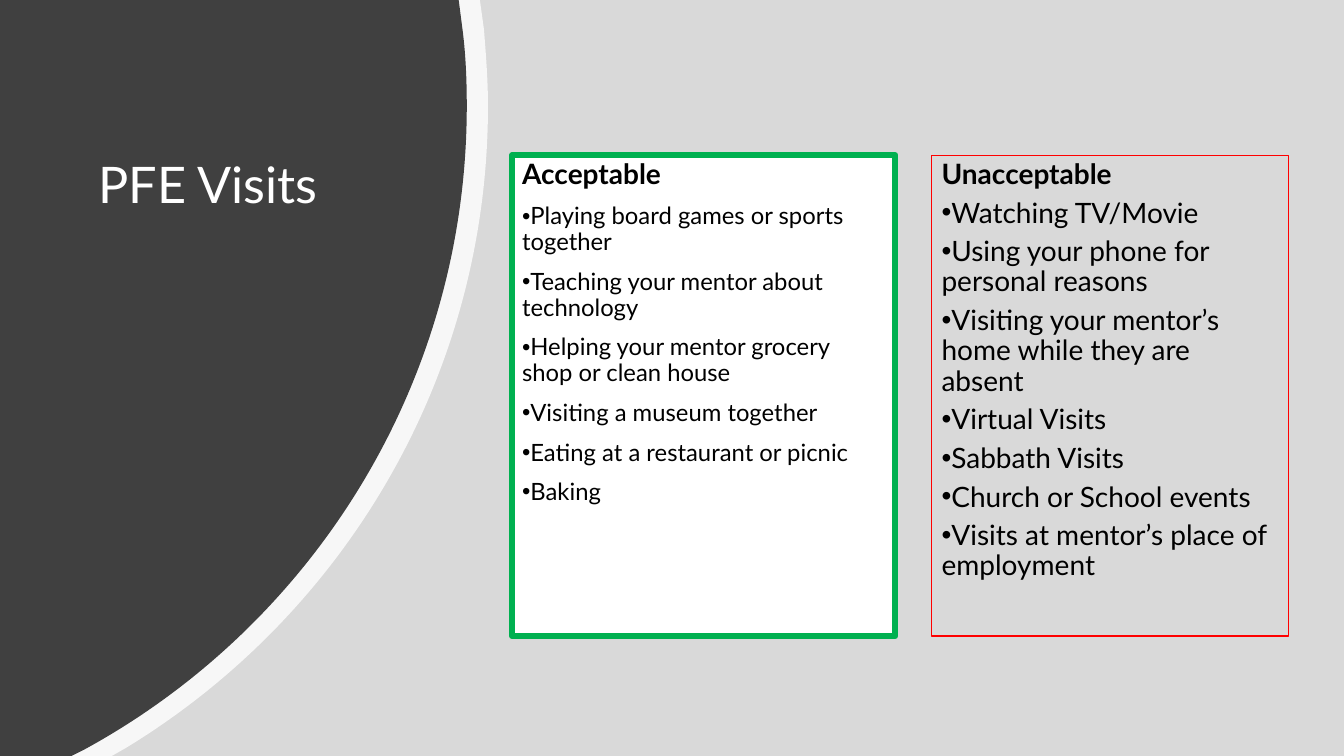
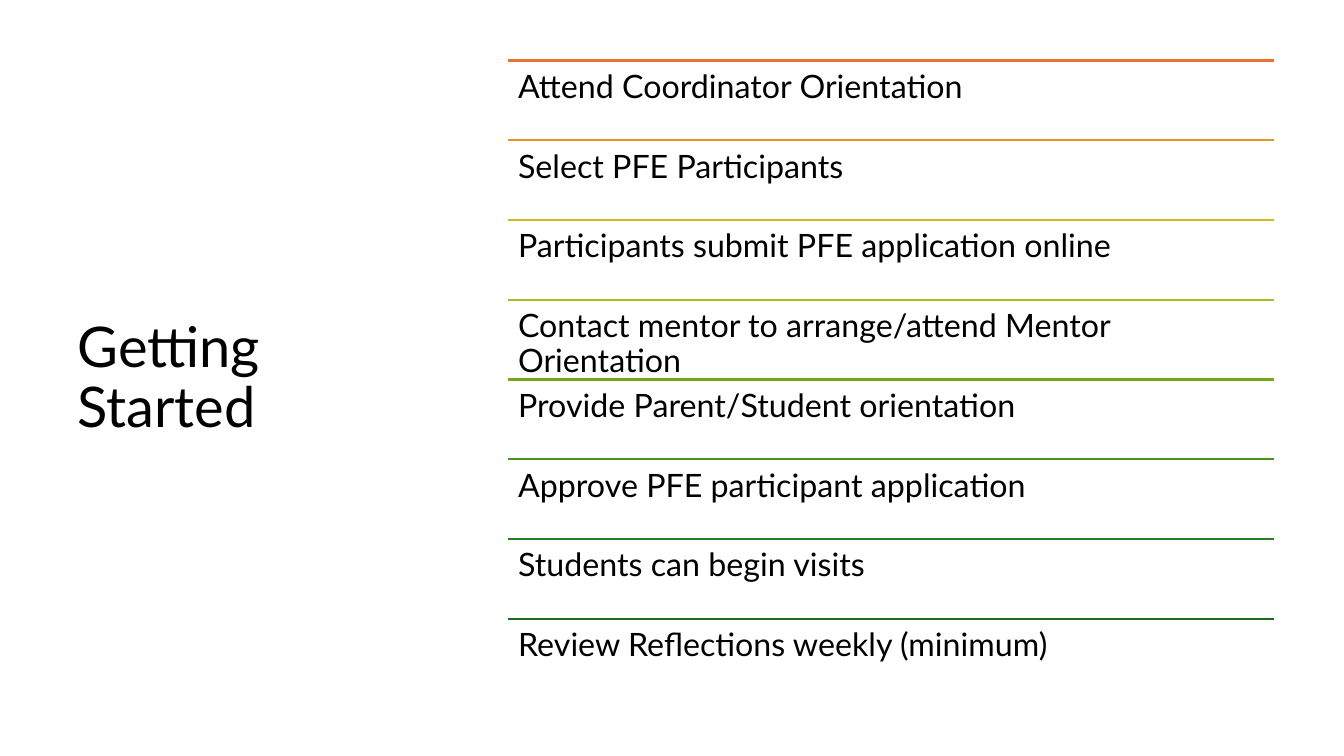
import lxml.etree
import pptx
import pptx.dml.color
import pptx.enum.shapes
import pptx.enum.text
import pptx.oxml.ns
import pptx.util

Inches = pptx.util.Inches
FONT = "Lato"
SLIDE_WIDTH, SLIDE_HEIGHT = 13.33, 7.5
COLORS = {
    "backdrop": "D9D9D9",
    "dark": "404040",
    "white": "FFFFFF",
    "black": "000000",
    "acceptable": "00B050",
    "unacceptable": "FF0000",
}

HALO = [
    [(4.76, 0)],
    [(4.8, 0.29)],
    [(4.82, 0.54), (4.84, 0.8), (4.84, 1.05)],
    [(4.84, 3.75), (3.4, 6.11), (1.25, 7.42)],
    [(1.11, SLIDE_HEIGHT)],
    [(0, SLIDE_HEIGHT)],
]
DISC = [
    [(4.55, 0)],
    [(4.59, 0.31)],
    [(4.62, 0.55), (4.63, 0.8), (4.63, 1.05)],
    [(4.63, 3.81), (3.09, 6.21), (0.83, 7.44)],
    [(0.71, SLIDE_HEIGHT)],
    [(0, SLIDE_HEIGHT)],
]

ACCEPTABLE = [
    "Playing board games or sports together",
    "Teaching your mentor about technology",
    "Helping your mentor grocery shop or clean house",
    "Visiting a museum together",
    "Eating at a restaurant or picnic",
    "Baking",
]
UNACCEPTABLE = [
    "Watching TV/Movie",
    "Using your phone for personal reasons",
    "Visiting your mentor’s home while they are absent",
    "Virtual Visits",
    "Sabbath Visits",
    "Church or School events",
    "Visits at mentor’s place of employment",
]
STEPS = [
    ("Attend Coordinator Orientation", "E97132"),
    ("Select PFE Participants", "E49622"),
    ("Participants submit PFE application online", "D2B81E"),
    ("Contact mentor to arrange/attend Mentor Orientation", "ABBC1E"),
    ("Provide Parent/Student orientation", "75A71D"),
    ("Approve PFE participant application", "49931D"),
    ("Students can begin visits", "277F1B"),
    ("Review Reflections weekly (minimum)", "196B24"),
]


def rgb(value):
    return pptx.dml.color.RGBColor.from_string(value)


def add_child(parent, tag, **attributes):
    return lxml.etree.SubElement(parent, pptx.oxml.ns.qn(tag), attributes)


def add_bullet(paragraph):
    properties = paragraph._p.get_or_add_pPr()
    properties.set("marL", "0")
    properties.set("indent", str(-Inches(0.25)))
    add_child(properties, "a:buFont", typeface="Arial")
    add_child(properties, "a:buChar", char="•")


def write_paragraph(paragraph, text, size, color="black", bold=False,
                    bullet=False, before=0, after=0):
    paragraph.alignment = pptx.enum.text.PP_ALIGN.LEFT
    paragraph.line_spacing = 0.9
    paragraph.space_before = pptx.util.Pt(before)
    paragraph.space_after = pptx.util.Pt(after)
    if bullet:
        add_bullet(paragraph)
    run = paragraph.add_run()
    run.text = text
    run.font.name = FONT
    run.font.size = pptx.util.Pt(size)
    run.font.bold = bold
    run.font.color.rgb = rgb(COLORS[color])


def prepare_frame(shape, anchor="TOP", top_inset=0.05):
    frame = shape.text_frame
    frame.word_wrap = True
    frame.vertical_anchor = getattr(pptx.enum.text.MSO_ANCHOR, anchor)
    frame.margin_top = frame.margin_bottom = Inches(top_inset)
    return frame


def add_text(shapes, box, text, size, color="black", anchor="TOP", top_inset=0.05):
    shape = shapes.add_textbox(*map(Inches, box))
    frame = prepare_frame(shape, anchor, top_inset)
    write_paragraph(frame.paragraphs[0], text, size, color)


def style_shape(shape, fill=None, line=None, line_width=0):
    shape.shadow.inherit = False
    if fill:
        shape.fill.solid()
        shape.fill.fore_color.rgb = rgb(COLORS[fill])
    else:
        shape.fill.background()
    if line:
        shape.line.color.rgb = rgb(COLORS[line])
        shape.line.width = pptx.util.Pt(line_width)
    else:
        shape.line.fill.background()


def add_rectangle(slide, box, **style):
    kind = pptx.enum.shapes.MSO_SHAPE.RECTANGLE
    shape = slide.shapes.add_shape(kind, *map(Inches, box))
    style_shape(shape, **style)
    return shape


def to_emu(point):
    return tuple(map(Inches, point))


def bend_segments(shape, segments):
    lines = shape._element.findall(".//" + pptx.oxml.ns.qn("a:lnTo"))
    for line, points in zip(lines, segments):
        if len(points) == 3:
            curve = lxml.etree.Element(pptx.oxml.ns.qn("a:cubicBezTo"))
            for x, y in map(to_emu, points):
                add_child(curve, "a:pt", x=str(x), y=str(y))
            line.getparent().replace(line, curve)


def add_curved_side(slide, segments, fill, opacity=100):
    builder = slide.shapes.build_freeform(0, 0)
    builder.add_line_segments([to_emu(points[-1]) for points in segments], close=True)
    shape = builder.convert_to_shape()
    bend_segments(shape, segments)
    style_shape(shape, fill=fill)
    if opacity < 100:
        color = shape._element.spPr.find(".//" + pptx.oxml.ns.qn("a:srgbClr"))
        add_child(color, "a:alpha", val=str(opacity * 1000))


def add_panel(slide, box, heading, items, size, before=0, after=0, **style):
    frame = prepare_frame(add_rectangle(slide, box, **style))
    write_paragraph(frame.paragraphs[0], heading, 20, bold=True,
                    before=before, after=after)
    for item in items:
        write_paragraph(frame.add_paragraph(), item, size, bullet=True,
                        before=before, after=after)


def add_rule(shapes, left, top, width, color):
    kind = pptx.enum.shapes.MSO_CONNECTOR.STRAIGHT
    ends = map(Inches, (left, top, left + width, top))
    connector = shapes.add_connector(kind, *ends)
    connector.line.color.rgb = rgb(color)
    connector.line.width = pptx.util.Pt(1.5)
    add_child(connector._element.spPr, "a:effectLst")


def add_step_list(slide, box, steps):
    left, top, width, height = box
    row_height = height / len(steps)
    shapes = slide.shapes.add_group_shape().shapes
    for index, (text, color) in enumerate(steps):
        row_top = top + index * row_height
        add_rule(shapes, left, row_top, width, color)
        add_text(shapes, (left, row_top, width, row_height), text, 23, top_inset=0.1)


def build_visits(slide):
    add_rectangle(slide, (0, 0, SLIDE_WIDTH, SLIDE_HEIGHT), fill="backdrop")
    add_curved_side(slide, HALO, "white", opacity=80)
    add_curved_side(slide, DISC, "dark")
    add_text(slide.shapes, (0.88, 1.54, 3.14, 2.36), "PFE Visits", 36, "white")
    add_panel(slide, (5.08, 1.54, 3.8, 4.77), "Acceptable", ACCEPTABLE, 17,
              before=10, fill="white", line="acceptable", line_width=4.5)
    add_panel(slide, (9.24, 1.54, 3.54, 4.77), "Unacceptable", UNACCEPTABLE, 20,
              after=6, line="unacceptable", line_width=0.75)


def build_getting_started(slide):
    add_text(slide.shapes, (0.67, 0.6, 3.82, 6.33), "Getting Started", 40, anchor="MIDDLE")
    add_step_list(slide, (5.04, 0.6, 7.6, 6.33), STEPS)


def main():
    presentation = pptx.Presentation()
    presentation.slide_width = Inches(SLIDE_WIDTH)
    presentation.slide_height = Inches(SLIDE_HEIGHT)
    for build in (build_visits, build_getting_started):
        build(presentation.slides.add_slide(presentation.slide_layouts[6]))
    presentation.save("out.pptx")


if __name__ == "__main__":
    main()
